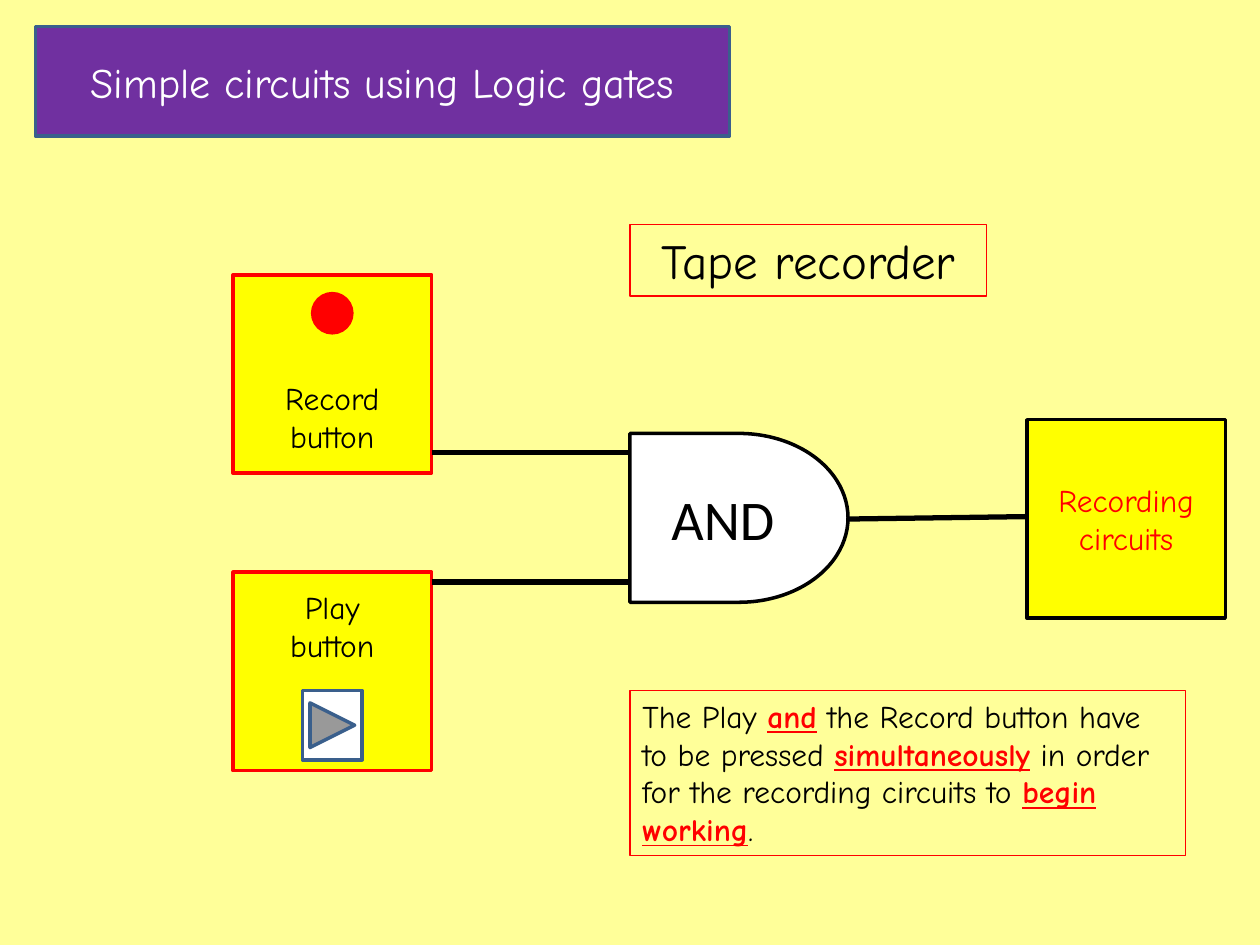
"""Build a slide showing a tape recorder as a simple AND gate circuit."""
import dataclasses
import typing

import pptx
import pptx.dml.color
import pptx.enum.shapes
import pptx.enum.text
import pptx.oxml
import pptx.oxml.ns
import pptx.util

Pt = pptx.util.Pt
Shapes = pptx.enum.shapes.MSO_SHAPE
Align = pptx.enum.text.PP_ALIGN
Anchor = pptx.enum.text.MSO_ANCHOR


@dataclasses.dataclass(frozen=True)
class Theme:
    background: str = "FFFF99"
    title_fill: str = "7030A0"
    title_line: str = "3A5F8C"
    box: str = "FFFF00"
    accent: str = "FF0000"
    ink: str = "000000"
    paper: str = "FFFFFF"
    hand_font: str = "Comic Neue"
    gate_font: str = "Calibri"
    body_size: float = 18
    title_size: float = 24
    caption_size: float = 28
    gate_size: float = 32
    thin: float = 0.75
    outline: float = 2
    wire: float = 3


THEME = Theme()


class Box(typing.NamedTuple):
    left: float
    top: float
    width: float
    height: float


class Style(typing.NamedTuple):
    fill: typing.Optional[str]
    line: str
    line_width: float = THEME.outline


class Lettering(typing.NamedTuple):
    size: float = THEME.body_size
    color: str = THEME.ink
    font: str = THEME.hand_font


class Button(typing.NamedTuple):
    label: str
    top: float
    label_top: float
    icon: typing.Any
    icon_box: Box
    icon_style: Style


class Wire(typing.NamedTuple):
    start_x: float
    start_y: float
    end_x: float
    end_y: float


class Phrase(typing.NamedTuple):
    text: str
    stressed: bool = False


SIDE = 113.4
BUTTON_LEFT = 133.2
BUTTON_CENTER = BUTTON_LEFT + SIDE / 2
LABEL_WIDTH, LABEL_HEIGHT = 79.2, 51.1
COLUMN = 360
GATE = Box(COLUMN, 247.7, 124.6, 96.5)
OUTPUT = Box(586.8, 239.8, SIDE, SIDE)
FRAME = Style(None, THEME.accent, THEME.thin)

BUTTONS = [
    Button("Record button", 157, 213.1, Shapes.OVAL,
           Box(BUTTON_CENTER - 11.2, 167.8, 22.4, 22.4), Style(THEME.accent, THEME.accent)),
    Button("Play button", 327, 332.6, Shapes.ACTION_BUTTON_FORWARD_OR_NEXT,
           Box(BUTTON_CENTER - 17, 394.6, 34, 39.6), Style(THEME.paper, THEME.title_line)),
]
WIRES = [
    Wire(BUTTON_LEFT + SIDE, 258.5, GATE.left, 258.5),
    Wire(BUTTON_LEFT + SIDE, 332.6, GATE.left, 332.6),
    Wire(GATE.left + GATE.width, 296.6, OUTPUT.left, 295.2),
]
EXPLANATION = [
    Phrase("The Play "), Phrase("and", True),
    Phrase(" the Record button have to be pressed "), Phrase("simultaneously", True),
    Phrase(" in order for the recording circuits to "), Phrase("begin working", True), Phrase("."),
]


def rgb(color: str) -> pptx.dml.color.RGBColor:
    return pptx.dml.color.RGBColor.from_string(color)


def place(shape: typing.Any, box: Box) -> None:
    shape.left, shape.top, shape.width, shape.height = map(Pt, box)


def paint(shape: typing.Any, style: Style) -> None:
    if style.fill:
        shape.fill.solid()
        shape.fill.fore_color.rgb = rgb(style.fill)
    else:
        shape.fill.background()
    shape.line.color.rgb = rgb(style.line)
    shape.line.width = Pt(style.line_width)


def letter(run: typing.Any, lettering: Lettering) -> None:
    run.font.size = Pt(lettering.size)
    run.font.name = lettering.font
    run.font.color.rgb = rgb(lettering.color)


def write(shape: typing.Any, text: str, lettering: Lettering, anchor: typing.Any = Anchor.MIDDLE) -> None:
    text_frame = shape.text_frame
    text_frame.text = text
    text_frame.word_wrap = True
    text_frame.vertical_anchor = anchor
    paragraph = text_frame.paragraphs[0]
    paragraph.alignment = Align.CENTER
    letter(paragraph.runs[0], lettering)


def draw_shape(slide: typing.Any, kind: typing.Any, box: Box, style: Style) -> typing.Any:
    shape = slide.shapes.add_shape(kind, *map(Pt, box))
    shape.shadow.inherit = False
    paint(shape, style)
    return shape


def draw_title(slide: typing.Any, text: str) -> None:
    title = slide.shapes.title
    place(title, Box(20.2, 15.1, 396.7, 62.7))
    geometry = pptx.oxml.parse_xml(
        f'<a:prstGeom {pptx.oxml.ns.nsdecls("a")} prst="roundRect"><a:avLst/></a:prstGeom>')
    title.element.spPr.append(geometry)
    paint(title, Style(THEME.title_fill, THEME.title_line))
    write(title, text, Lettering(THEME.title_size, THEME.paper))
    title.text_frame.auto_size = pptx.enum.text.MSO_AUTO_SIZE.NONE


def draw_button(slide: typing.Any, button: Button) -> None:
    draw_shape(slide, Shapes.RECTANGLE, Box(BUTTON_LEFT, button.top, SIDE, SIDE),
               Style(THEME.box, THEME.accent))
    draw_shape(slide, button.icon, button.icon_box, button.icon_style)
    label_box = Box(BUTTON_CENTER - LABEL_WIDTH / 2, button.label_top, LABEL_WIDTH, LABEL_HEIGHT)
    label = slide.shapes.add_textbox(*map(Pt, label_box))
    write(label, button.label, Lettering(), Anchor.TOP)


def draw_wire(slide: typing.Any, wire: Wire) -> None:
    connector = slide.shapes.add_connector(pptx.enum.shapes.MSO_CONNECTOR.STRAIGHT, *map(Pt, wire))
    connector.line.color.rgb = rgb(THEME.ink)
    connector.line.width = Pt(THEME.wire)
    connector.element.spPr.append(
        pptx.oxml.parse_xml(f'<a:effectLst {pptx.oxml.ns.nsdecls("a")}/>'))


def draw_explanation(slide: typing.Any, phrases: typing.List[Phrase]) -> None:
    shape = draw_shape(slide, Shapes.RECTANGLE, Box(COLUMN, 394.6, 317.5, 94.3), FRAME)
    shape.text_frame.word_wrap = True
    shape.text_frame.vertical_anchor = Anchor.TOP
    paragraph = shape.text_frame.paragraphs[0]
    paragraph.alignment = Align.LEFT
    for phrase in phrases:
        run = paragraph.add_run()
        run.text = phrase.text
        letter(run, Lettering(color=THEME.accent if phrase.stressed else THEME.ink))
        run.font.bold = run.font.underline = phrase.stressed


def main() -> None:
    presentation = pptx.Presentation()
    presentation.slide_width, presentation.slide_height = Pt(720), Pt(540)
    slide = presentation.slides.add_slide(presentation.slide_layouts.get_by_name("Title Only"))
    slide.background.fill.solid()
    slide.background.fill.fore_color.rgb = rgb(THEME.background)
    draw_title(slide, "Simple circuits using Logic gates")
    for button in BUTTONS:
        draw_button(slide, button)
    gate = draw_shape(slide, Shapes.FLOWCHART_DELAY, GATE, Style(THEME.paper, THEME.ink))
    write(gate, "AND", Lettering(THEME.gate_size, font=THEME.gate_font))
    for wire in WIRES:
        draw_wire(slide, wire)
    output = draw_shape(slide, Shapes.RECTANGLE, OUTPUT, Style(THEME.box, THEME.ink))
    write(output, "Recording circuits", Lettering(color=THEME.accent))
    caption = draw_shape(slide, Shapes.RECTANGLE, Box(COLUMN, 128.2, 203.8, 41), FRAME)
    write(caption, "Tape recorder", Lettering(THEME.caption_size), Anchor.TOP)
    draw_explanation(slide, EXPLANATION)
    presentation.save("out.pptx")


if __name__ == "__main__":
    main()
